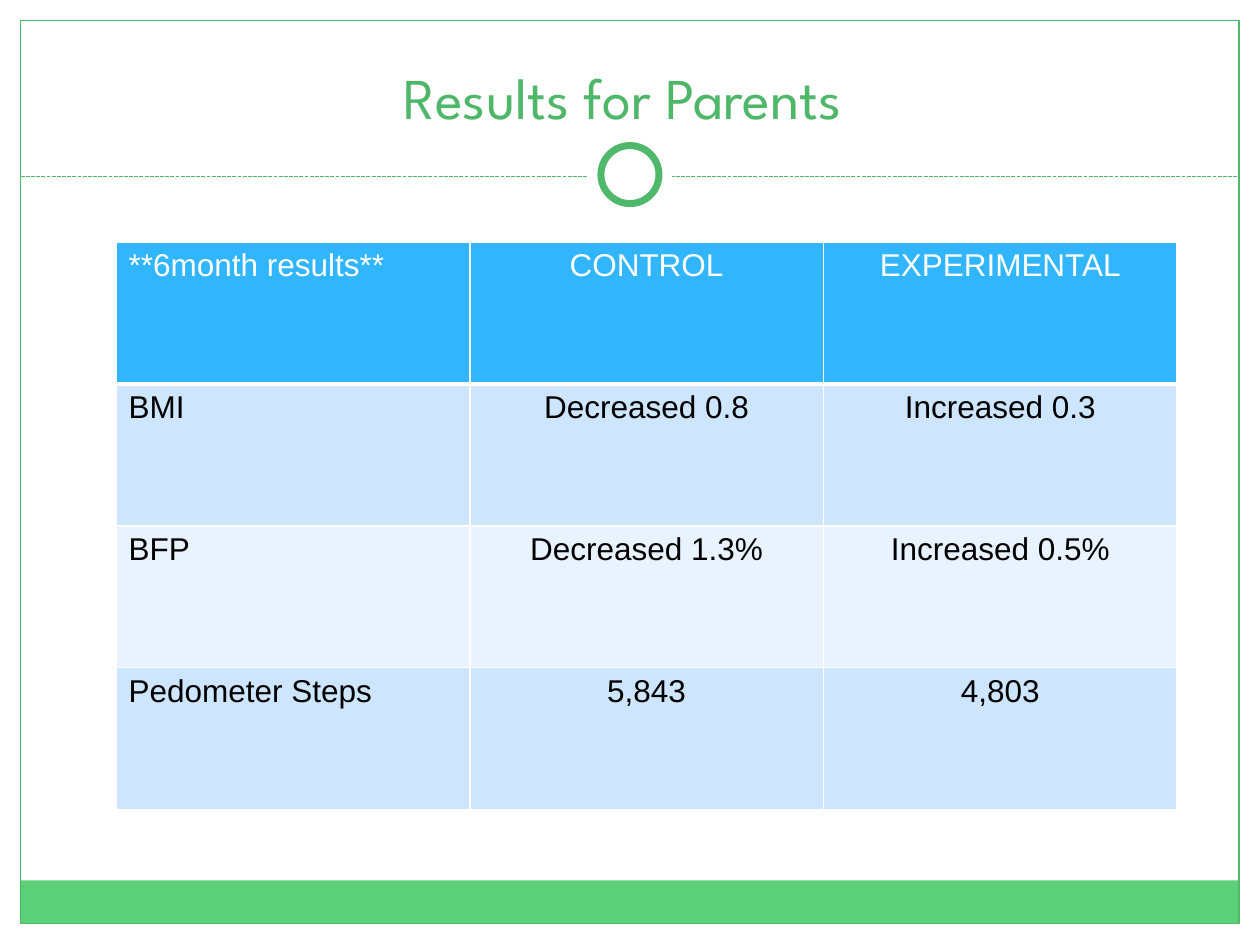
from lxml.etree import SubElement
from pptx import Presentation
from pptx.dml.color import RGBColor
from pptx.enum.dml import MSO_LINE_DASH_STYLE as Dash
from pptx.enum.shapes import MSO_CONNECTOR, MSO_SHAPE as Shape
from pptx.enum.text import MSO_ANCHOR as Anchor, PP_ALIGN as Align
from pptx.oxml.ns import qn
from pptx.util import Cm, Pt

COLORS = {
    "white": "FFFFFF",
    "black": "000000",
    "green": "50B86A",
    "title": "4FB769",
    "band": "5BD078",
    "header": "31B6FD",
    "odd_row": "CEE5FE",
    "even_row": "E8F3FF",
}
RESULTS = [
    ("**6month results**", "CONTROL", "EXPERIMENTAL"),
    ("BMI", "Decreased 0.8", "Increased 0.3"),
    ("BFP", "Decreased 1.3%", "Increased 0.5%"),
    ("Pedometer Steps", "5,843", "4,803"),
]
SLIDE_WIDTH, SLIDE_HEIGHT = 25.4, 19.05
MARGIN = 0.42
FRAME_WIDTH = SLIDE_WIDTH - 2 * MARGIN
RULE_Y = 3.56
RING_Y = 3.52
COLUMN_WIDTH, ROW_HEIGHT = 7.13, 2.86


def color(name):
    return RGBColor.from_string(COLORS[name])


def write_text(text_frame, text, *, size, font, fill, align=Align.LEFT):
    paragraph = text_frame.paragraphs[0]
    paragraph.alignment = align
    run = paragraph.add_run()
    run.text = text
    run.font.size = Pt(size)
    run.font.name = font
    run.font.color.rgb = color(fill)


def add_shape(slide, kind, left, top, width, height, *, fill=None, line=None, weight=0.75):
    shape = slide.shapes.add_shape(kind, Cm(left), Cm(top), Cm(width), Cm(height))
    shape.shadow.inherit = False
    if fill:
        shape.fill.solid()
        shape.fill.fore_color.rgb = color(fill)
    else:
        shape.fill.background()
    if line:
        shape.line.color.rgb = color(line)
        shape.line.width = Pt(weight)
    else:
        shape.line.fill.background()


def add_circle(slide, diameter, **style):
    """Add a circle centred on the ring's position."""
    radius = diameter / 2
    add_shape(slide, Shape.OVAL, SLIDE_WIDTH / 2 - radius, RING_Y - radius,
              diameter, diameter, **style)


def add_dashed_rule(slide):
    rule = slide.shapes.add_connector(MSO_CONNECTOR.STRAIGHT, Cm(MARGIN), Cm(RULE_Y),
                                      Cm(SLIDE_WIDTH - MARGIN), Cm(RULE_Y))
    rule.line.color.rgb = color("green")
    rule.line.width = Pt(0.75)
    rule.line.dash_style = Dash.SQUARE_DOT
    SubElement(rule._element.spPr, qn("a:effectLst"))


def add_title(slide, text):
    box = slide.shapes.add_textbox(Cm(0.85), Cm(0.64), Cm(23.7), Cm(2.12))
    box.text_frame.word_wrap = True
    box.text_frame.vertical_anchor = Anchor.BOTTOM
    write_text(box.text_frame, text, size=33, font="League Spartan", fill="title",
               align=Align.CENTER)


def set_borders(cell, bottom):
    """Draw white borders, 1 pt wide except for the given bottom width."""
    properties = cell._tc.get_or_add_tcPr()
    widths = {"a:lnL": 1, "a:lnR": 1, "a:lnT": 1, "a:lnB": bottom}
    for position, (tag, width) in enumerate(widths.items()):
        border = SubElement(properties, qn(tag), w=str(Pt(width)))
        fill = SubElement(border, qn("a:solidFill"))
        SubElement(fill, qn("a:srgbClr"), val=COLORS["white"])
        properties.insert(position, border)


def add_results_table(slide):
    rows, columns = len(RESULTS), len(RESULTS[0])
    table = slide.shapes.add_table(rows, columns, Cm(2.34), Cm(4.88),
                                   Cm(columns * COLUMN_WIDTH), Cm(rows * ROW_HEIGHT)).table
    for column in table.columns:
        column.width = Cm(COLUMN_WIDTH)
    for row_index, values in enumerate(RESULTS):
        table.rows[row_index].height = Cm(ROW_HEIGHT)
        is_header = row_index == 0
        row_fill = "header" if is_header else "odd_row" if row_index % 2 else "even_row"
        for column_index, value in enumerate(values):
            cell = table.cell(row_index, column_index)
            cell.fill.solid()
            cell.fill.fore_color.rgb = color(row_fill)
            set_borders(cell, bottom=3 if is_header else 1)
            write_text(cell.text_frame, value, size=18, font="Arial",
                       fill="white" if is_header else "black",
                       align=Align.CENTER if column_index else Align.LEFT)


def main():
    presentation = Presentation()
    presentation.slide_width = Cm(SLIDE_WIDTH)
    presentation.slide_height = Cm(SLIDE_HEIGHT)
    slide = presentation.slides.add_slide(presentation.slide_layouts[6])

    add_shape(slide, Shape.RECTANGLE, MARGIN, 17.75, FRAME_WIDTH, 0.87, fill="band")
    add_shape(slide, Shape.RECTANGLE, MARGIN, MARGIN, FRAME_WIDTH, 18.2, line="green")
    add_dashed_rule(slide)
    add_circle(slide, 1.7, fill="white")
    add_circle(slide, 1.17, fill="white", line="green", weight=4)
    add_title(slide, "Results for Parents ")
    add_results_table(slide)

    presentation.save("out.pptx")


if __name__ == "__main__":
    main()
